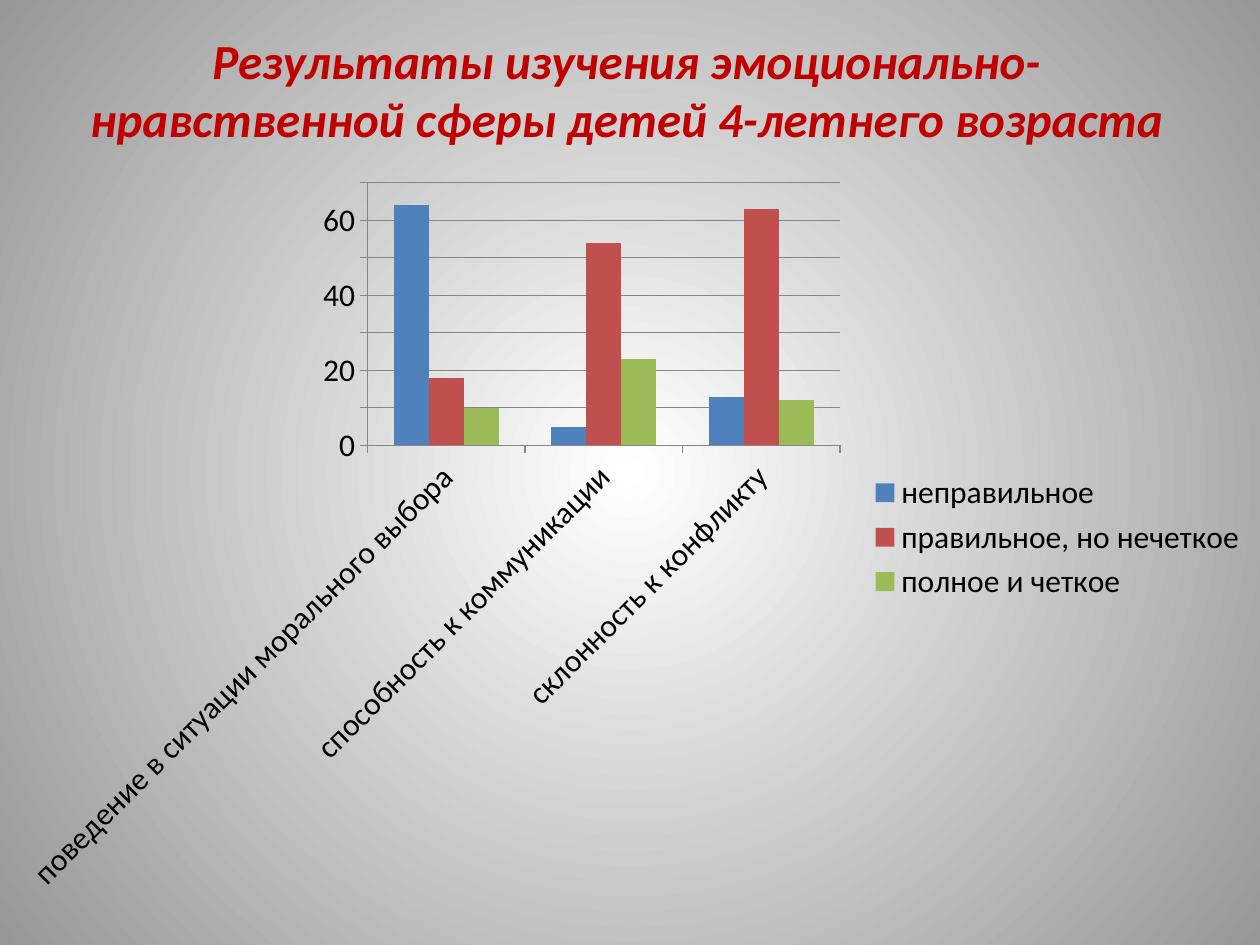
from lxml import etree
from pptx import Presentation
from pptx.chart.data import CategoryChartData
from pptx.dml.color import RGBColor
from pptx.enum.chart import XL_CHART_TYPE, XL_LEGEND_POSITION, XL_TICK_MARK
from pptx.enum.text import MSO_ANCHOR, PP_ALIGN
from pptx.oxml.ns import qn
from pptx.util import Pt

COLUMNS = XL_CHART_TYPE.COLUMN_CLUSTERED
LEGEND_RIGHT = XL_LEGEND_POSITION.RIGHT
TICK_OUTSIDE = XL_TICK_MARK.OUTSIDE
MIDDLE = MSO_ANCHOR.MIDDLE
CENTER = PP_ALIGN.CENTER

FONT = "Calibri"
COLORS = {
    "center": "FFFFFF",
    "edge": "979797",
    "title": "C00000",
    "text": "000000",
    "line": "868686",
}
CATEGORIES = [
    "поведение в ситуации морального выбора",
    "способность к коммуникации",
    "склонность к конфликту",
]
SERIES = [
    ("неправильное", (64, 5, 13), "4F81BD"),
    ("правильное, но нечеткое", (18, 54, 63), "C0504D"),
    ("полное и четкое", (10, 23, 12), "9BBB59"),
]


def rgb(value):
    return RGBColor.from_string(value)


def format_font(font, size, color, bold=False, italic=False):
    font.name = FONT
    font.size = Pt(size)
    font.bold = bold
    font.italic = italic
    font.color.rgb = rgb(color)


def add_text(slide, box, text, align=CENTER, anchor=MIDDLE, **font_format):
    shape = slide.shapes.add_textbox(*map(Pt, box))
    frame = shape.text_frame
    frame.word_wrap = True
    frame.vertical_anchor = anchor
    paragraph = frame.paragraphs[0]
    paragraph.alignment = align
    run = paragraph.add_run()
    run.text = text
    format_font(run.font, **font_format)


def set_radial_background(slide):
    fill = slide.background.fill
    fill.gradient()
    for stop, name in zip(fill.gradient_stops, ("center", "edge")):
        stop.color.rgb = rgb(COLORS[name])
    gradient = slide.element.find(".//" + qn("a:gradFill"))
    linear = gradient.find(qn("a:lin"))
    radial = etree.Element(qn("a:path"), path="circle")
    sides = dict.fromkeys("ltrb", "50000")
    etree.SubElement(radial, qn("a:fillToRect"), sides)
    gradient.replace(linear, radial)


def format_axis(axis):
    axis.major_tick_mark = TICK_OUTSIDE
    axis.format.line.color.rgb = rgb(COLORS["line"])
    axis.format.line.width = Pt(0.75)
    format_font(axis.tick_labels.font, 18, COLORS["text"])


def add_results_chart(slide, box):
    data = CategoryChartData()
    data.categories = CATEGORIES
    for name, values, _ in SERIES:
        data.add_series(name, values)
    chart = slide.shapes.add_chart(COLUMNS, *map(Pt, box), data).chart
    chart.has_title = False
    format_font(chart.font, 18, COLORS["text"])

    plot = chart.plots[0]
    plot.gap_width = 150
    plot.overlap = 0
    plot.vary_by_categories = False
    for series, (_, _, color) in zip(plot.series, SERIES):
        series.format.fill.solid()
        series.format.fill.fore_color.rgb = rgb(color)

    format_axis(chart.category_axis)
    label_body = chart.category_axis._element.find(
        qn("c:txPr") + "/" + qn("a:bodyPr"))
    label_body.set("rot", "-2700000")

    value_axis = chart.value_axis
    format_axis(value_axis)
    value_axis.minimum_scale = 0
    value_axis.maximum_scale = 70
    value_axis.major_unit = 10
    value_axis.has_major_gridlines = True
    grid_line = value_axis.major_gridlines.format.line
    grid_line.color.rgb = rgb(COLORS["line"])
    grid_line.width = Pt(0.75)

    chart.has_legend = True
    chart.legend.position = LEGEND_RIGHT
    chart.legend.include_in_layout = False
    format_font(chart.legend.font, 18, COLORS["text"])


def main():
    presentation = Presentation()
    presentation.slide_width = Pt(720)
    presentation.slide_height = Pt(540)
    slide = presentation.slides.add_slide(presentation.slide_layouts[6])
    set_radial_background(slide)
    add_text(
        slide, (34, 0, 648, 101.5),
        "Результаты изучения эмоционально-нравственной сферы детей "
        "4-летнего возраста",
        size=28, color=COLORS["title"], bold=True, italic=True)
    add_results_chart(slide, (0, 96, 720, 422))
    presentation.save("out.pptx")


if __name__ == "__main__":
    main()
